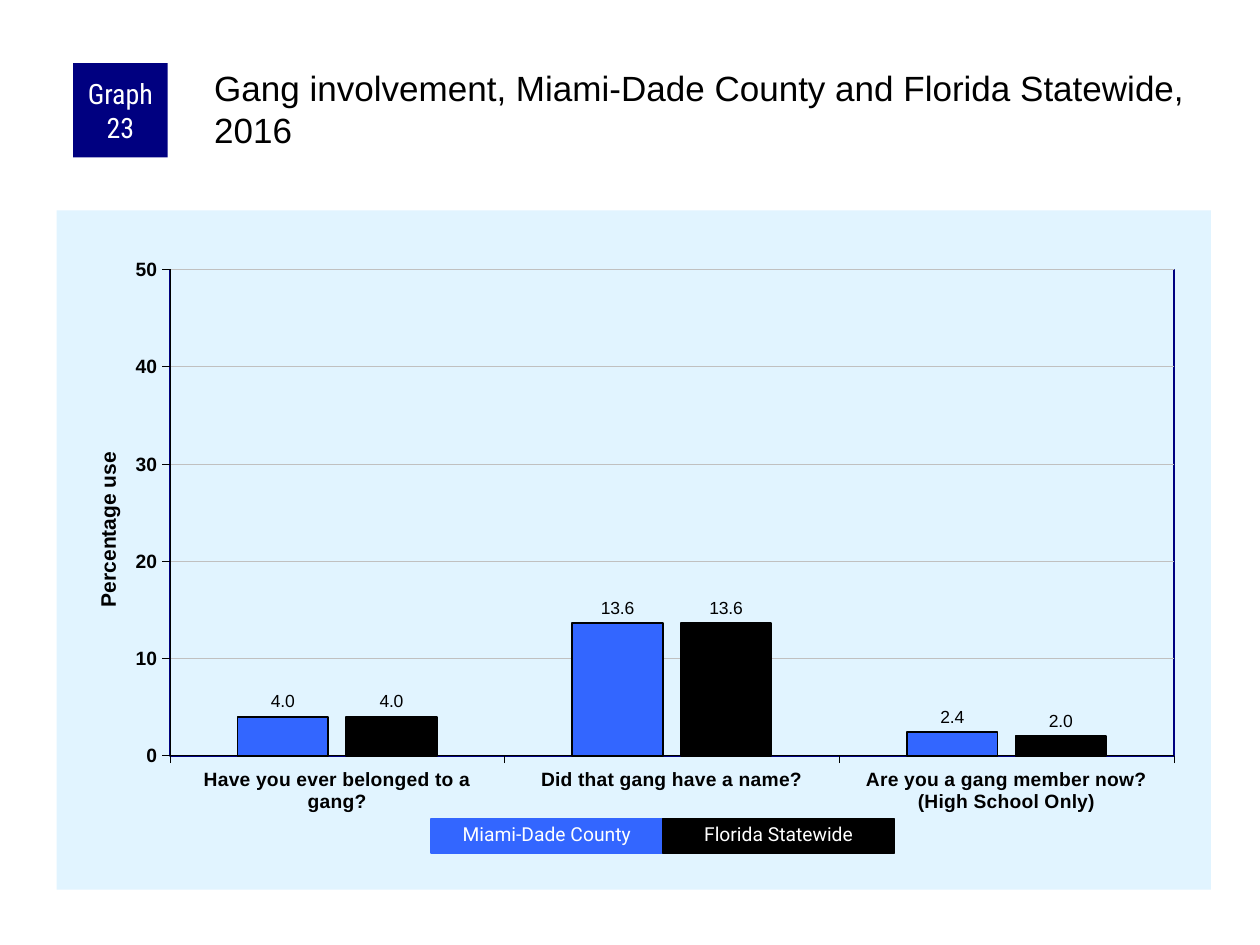
from lxml.etree import fromstring
from pptx import Presentation
from pptx.chart.data import CategoryChartData
from pptx.dml.color import RGBColor
from pptx.enum.chart import XL_CHART_TYPE, XL_LABEL_POSITION, XL_TICK_MARK
from pptx.enum.shapes import MSO_SHAPE
from pptx.enum.text import MSO_ANCHOR, MSO_AUTO_SIZE, PP_ALIGN
from pptx.oxml import parse_xml
from pptx.oxml.ns import nsdecls
from pptx.util import Inches, Pt

NAVY = RGBColor(0x00, 0x00, 0x80)
BLUE = RGBColor(0x33, 0x66, 0xFF)
BLACK = RGBColor(0x00, 0x00, 0x00)
WHITE = RGBColor(0xFF, 0xFF, 0xFF)
GRAY = RGBColor(0xC0, 0xC0, 0xC0)
PALE_BLUE = RGBColor(0xE1, 0xF4, 0xFF)


def add_label(page, text, left, top, width, height, fill, font_name, size):
    """Add a filled rectangle with centred white text."""
    box = page.shapes.add_shape(MSO_SHAPE.RECTANGLE, Inches(left), Inches(top),
                                Inches(width), Inches(height))
    box.shadow.inherit = False
    box.fill.solid()
    box.fill.fore_color.rgb = fill
    box.line.fill.background()
    box.text_frame.text = text
    para = box.text_frame.paragraphs[0]
    para.alignment = PP_ALIGN.CENTER
    span = para.runs[0]
    span.font.name = font_name
    span.font.size = Pt(size)
    span.font.color.rgb = WHITE
    return box


def manual_layout(x, y, extra=""):
    """Return a c:layout element placed by fractions of the chart area."""
    return parse_xml(
        f'<c:layout {nsdecls("c")}><c:manualLayout>'
        f'{"<c:layoutTarget val=%sinner%s/>" % (chr(34), chr(34)) if extra else ""}'
        '<c:xMode val="edge"/><c:yMode val="edge"/>'
        f'<c:x val="{x}"/><c:y val="{y}"/>{extra}</c:manualLayout></c:layout>')


deck = Presentation()
deck.slide_width = Inches(10)
deck.slide_height = Inches(7.5)
page = deck.slides.add_slide(deck.slide_layouts[6])

# Column chart
data = CategoryChartData(number_format="0.0")
data.categories = ["Have you ever belonged to a gang?", "Did that gang have a name?",
                   "Are you a gang member now?\n(High School Only)"]
data.add_series("Series 1", (4, 13.6, 2.4))
data.add_series("Series 2", (4, 13.6, 2))
chart = page.shapes.add_chart(XL_CHART_TYPE.COLUMN_CLUSTERED, Inches(0.45), Inches(1.67),
                              Inches(9.16), Inches(5.39), data).chart
chart.has_title = False
chart.has_legend = False
chart.font.name = "Arial"
chart.font.size = Pt(11.5)
chart.font.color.rgb = BLACK

plot = chart.plots[0]
plot.gap_width = 150
plot.overlap = -20
plot.vary_by_categories = False
for series, color in zip(plot.series, (BLUE, BLACK)):
    series.format.fill.solid()
    series.format.fill.fore_color.rgb = color
    series.format.line.color.rgb = BLACK
    series.format.line.width = Pt(1)
    labels = series.data_labels
    labels.show_value = True
    labels.number_format = "0.0"
    labels.number_format_is_linked = False
    labels.position = XL_LABEL_POSITION.OUTSIDE_END
    labels.font.name = "Arial"
    labels.font.size = Pt(10)
    labels.font.color.rgb = BLACK

# Axes
for axis in (chart.category_axis, chart.value_axis):
    axis.major_tick_mark = XL_TICK_MARK.OUTSIDE
    axis.minor_tick_mark = XL_TICK_MARK.NONE
    axis.format.line.color.rgb = BLACK
    axis.format.line.width = Pt(0.25)
    axis.tick_labels.font.name = "Arial"
    axis.tick_labels.font.size = Pt(11)
    axis.tick_labels.font.bold = True
    axis.tick_labels.font.color.rgb = BLACK

value_axis = chart.value_axis
value_axis.minimum_scale = 0
value_axis.maximum_scale = 50
value_axis.major_unit = 10
value_axis.tick_labels.number_format = "0"
value_axis.tick_labels.number_format_is_linked = False
value_axis.has_major_gridlines = True
value_axis.major_gridlines.format.line.color.rgb = GRAY
value_axis.major_gridlines.format.line.width = Pt(0.25)
value_axis.axis_title.text_frame.text = "Percentage use"
title_font = value_axis.axis_title.text_frame.paragraphs[0].runs[0].font
title_font.name = "Arial"
title_font.size = Pt(12)
title_font.bold = True
title_font.color.rgb = BLACK

# Chart background, plot border and manual placement
root = chart.element
for old_layout in root.xpath("c:chart/c:plotArea/c:layout | .//c:valAx/c:title/c:layout"):
    old_layout.getparent().remove(old_layout)
plot_area = root.xpath("c:chart/c:plotArea")[0]
plot_area.insert(0, manual_layout(0.098, 0.087, '<c:w val="0.87"/><c:h val="0.716"/>'))
plot_area.append(parse_xml(
    f'<c:spPr {nsdecls("c", "a")}><a:noFill/><a:ln w="12700"><a:solidFill>'
    f'<a:srgbClr val="{NAVY}"/></a:solidFill></a:ln></c:spPr>'))
root.xpath("c:chart")[0].addnext(parse_xml(
    f'<c:spPr {nsdecls("c", "a")}><a:solidFill><a:srgbClr val="{PALE_BLUE}"/></a:solidFill>'
    '<a:ln><a:noFill/></a:ln></c:spPr>'))
root.xpath(".//c:valAx/c:title/c:tx")[0].addnext(manual_layout(0.03, 0.35))
title_body = root.xpath(".//c:valAx/c:title//a:bodyPr")[0]
title_body.set("rot", "-5400000")
title_body.set("vert", "horz")

# Graph number
badge = add_label(page, "Graph 23", 0.58, 0.5, 0.75, 0.75, NAVY, "Roboto Condensed", 16)
frame = badge.text_frame
frame.word_wrap = True
frame.vertical_anchor = MSO_ANCHOR.MIDDLE
frame.margin_left = frame.margin_right = Inches(0.05)
frame.margin_top = frame.margin_bottom = 0

# Title
title = page.shapes.add_textbox(Inches(1.67), Inches(0.5), Inches(7.92), Inches(0.83))
frame = title.text_frame
frame.word_wrap = True
frame.margin_left = frame.margin_top = Inches(0.03)
frame.margin_right = frame.margin_bottom = 0
frame.text = "Gang involvement, Miami-Dade County and Florida Statewide, 2016"
span = frame.paragraphs[0].runs[0]
span.font.name = "Arial"
span.font.size = Pt(20)
span.font.color.rgb = BLACK

# Legend
LEGEND_WIDTH = 1.84
for index, (name, color) in enumerate((("Miami-Dade County", BLUE), ("Florida Statewide", BLACK))):
    key = add_label(page, name, 3.42 + index * LEGEND_WIDTH, 6.5, LEGEND_WIDTH, 0.27,
                    color, "Roboto", 11)
    key.line.color.rgb = color
    key.line.width = Pt(0.75)
    key.text_frame.word_wrap = True
    key.text_frame.vertical_anchor = MSO_ANCHOR.TOP
    key.text_frame.auto_size = MSO_AUTO_SIZE.SHAPE_TO_FIT_TEXT
    key.text_frame.paragraphs[0].line_spacing = 0.9

deck.save("out.pptx")
